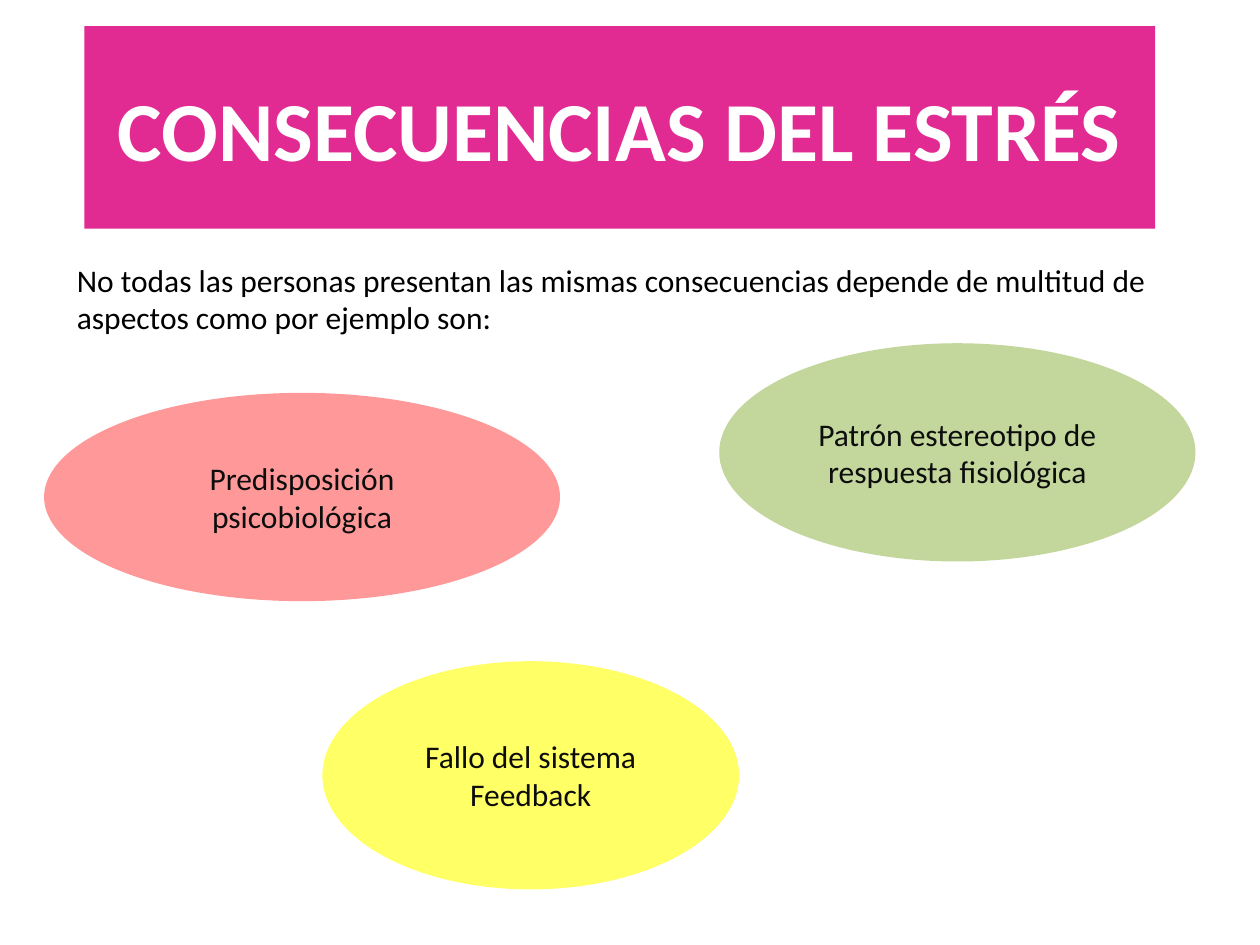
from pptx import Presentation
from pptx.dml.color import RGBColor
from pptx.enum.shapes import MSO_SHAPE as Shape
from pptx.enum.text import MSO_ANCHOR as Anchor, PP_ALIGN as Align
from pptx.util import Cm, Pt

PINK = RGBColor(0xE1, 0x2B, 0x93)
SALMON = RGBColor(0xFF, 0x99, 0x99)
GREEN = RGBColor(0xC3, 0xD6, 0x9B)
YELLOW = RGBColor(0xFF, 0xFF, 0x66)
WHITE = RGBColor(0xFF, 0xFF, 0xFF)
BLACK = RGBColor(0, 0, 0)
DARK = RGBColor(0x0D, 0x0D, 0x0D)

# Text, fill and box (left, top, width, height in cm) of each factor
FACTORS = [
    ("Predisposición psicobiológica", SALMON, (0.89, 7.92, 10.4, 4.2)),
    ("Patrón estereotipo de respuesta fisiológica", GREEN, (14.5, 6.92, 9.6, 4.4)),
    ("Fallo del sistema Feedback", YELLOW, (6.5, 13.33, 8.4, 4.6)),
]


def write(frame, text, color, size=18, bold=False, align=Align.LEFT):
    frame.word_wrap = True
    paragraph = frame.paragraphs[0]
    paragraph.alignment = align
    run = paragraph.add_run()
    run.text = text
    font_format = {"name": "Calibri", "size": Pt(size), "bold": bold}
    for attribute, value in font_format.items():
        setattr(run.font, attribute, value)
    run.font.color.rgb = color


def add_filled(slide, kind, box, fill, text, color, **text_format):
    figure = slide.shapes.add_shape(kind, *map(Cm, box))
    figure.shadow.inherit = False
    figure.fill.solid()
    figure.fill.fore_color.rgb = fill
    figure.line.fill.background()
    figure.text_frame.vertical_anchor = Anchor.MIDDLE
    write(figure.text_frame, text, color, align=Align.CENTER, **text_format)


def add_paragraph(slide, box, text):
    intro = slide.shapes.add_textbox(*map(Cm, box))
    write(intro.text_frame, text, BLACK)


def main():
    deck = Presentation()
    deck.slide_width, deck.slide_height = Cm(25.4), Cm(19.05)
    slide = deck.slides.add_slide(deck.slide_layouts[6])

    # Factors that shape the consequences
    for text, fill, box in FACTORS:
        add_filled(slide, Shape.OVAL, box, fill, text, DARK)

    # Introduction
    add_paragraph(slide, (1.3, 5.13, 22.6, 1.8),
                  "No todas las personas presentan las mismas consecuencias "
                  "depende de multitud de aspectos como por ejemplo son:")

    # Title banner
    add_filled(slide, Shape.RECTANGLE, (1.7, 0.53, 21.59, 4.08), PINK,
               "CONSECUENCIAS DEL ESTRÉS", WHITE, size=48, bold=True)

    deck.save("out.pptx")


if __name__ == "__main__":
    main()
